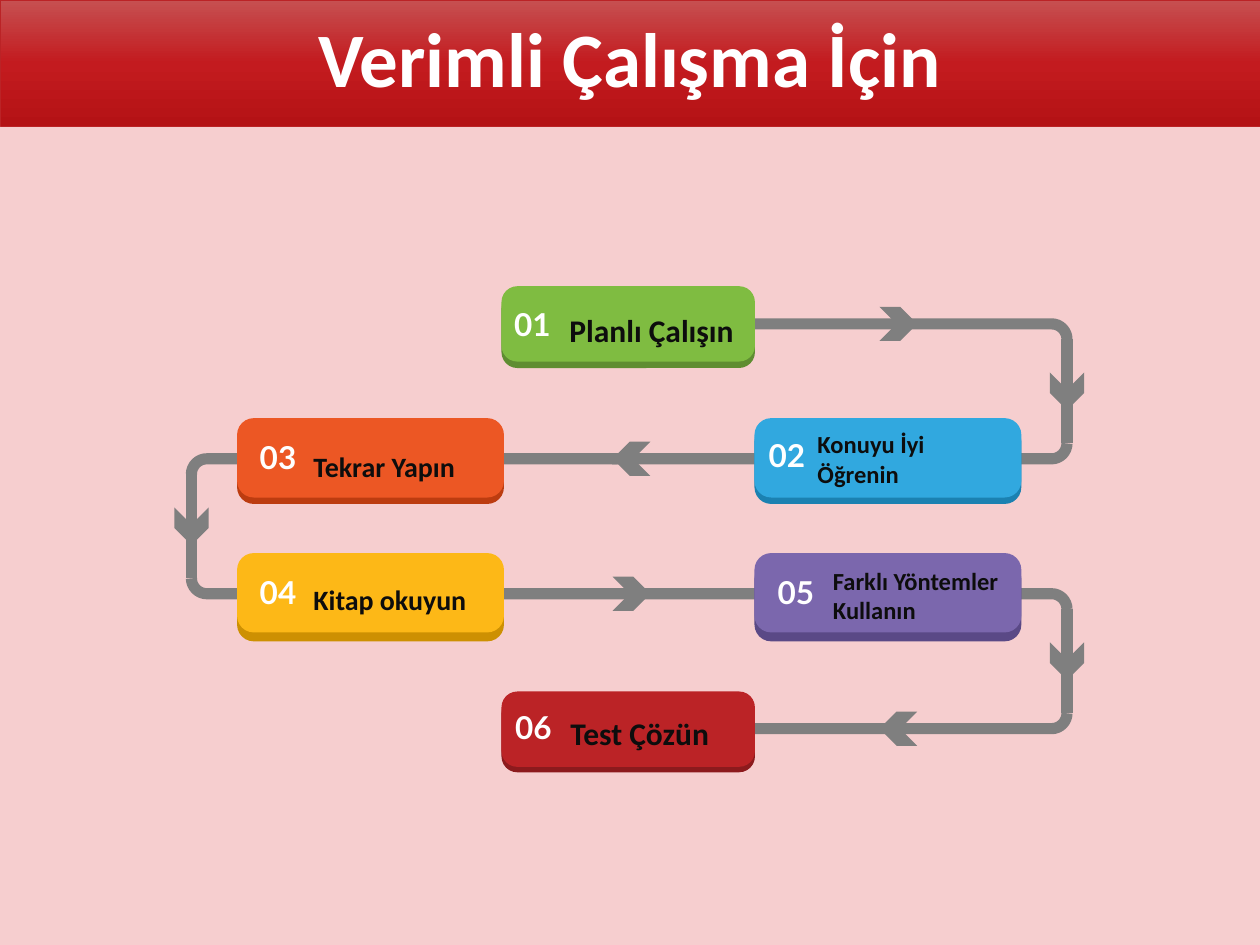
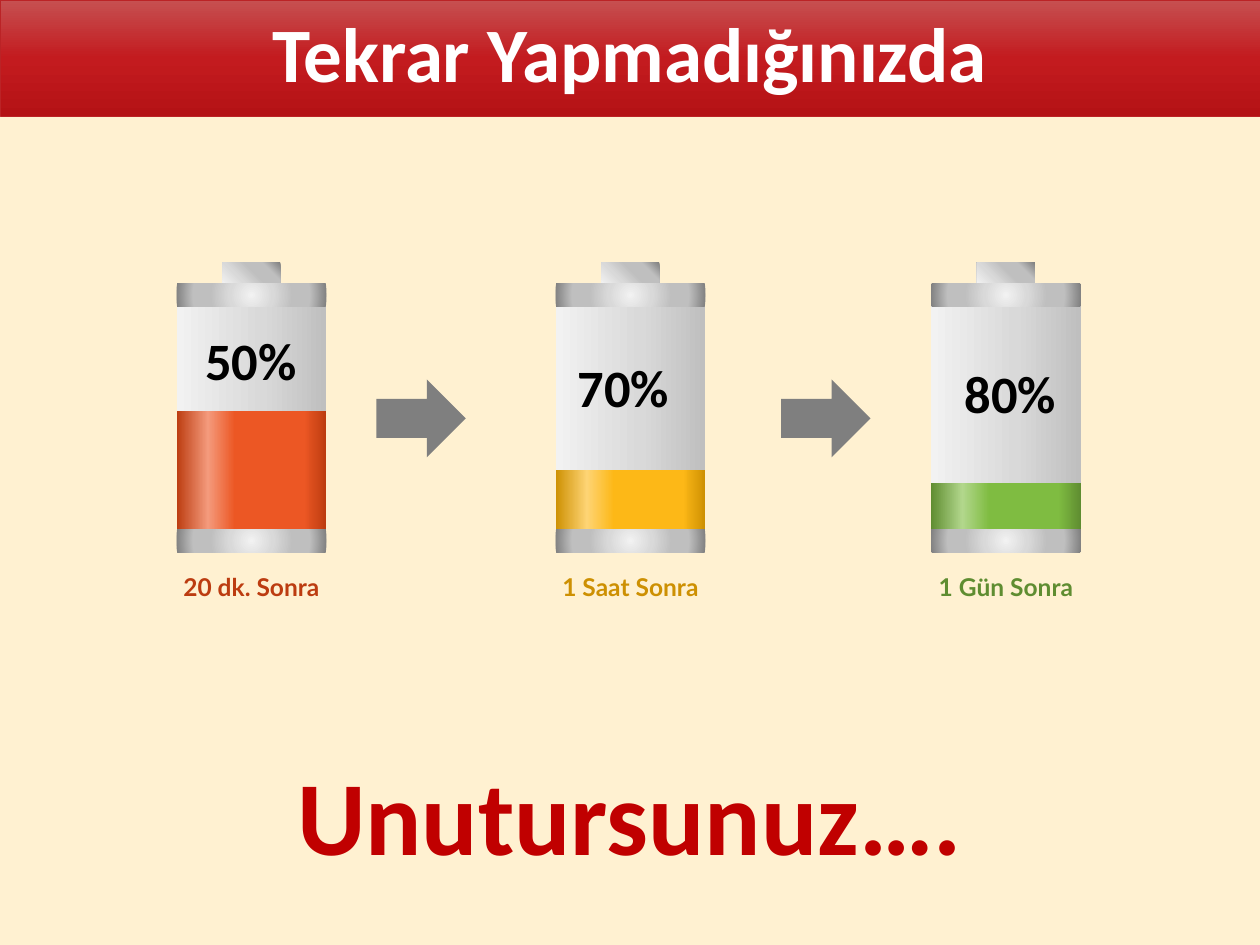
import math
from dataclasses import dataclass
from typing import NamedTuple

from lxml import etree
from pptx import Presentation
from pptx import util as u
from pptx.dml.color import RGBColor
from pptx.enum import shapes, text
from pptx.oxml import ns

Stops = tuple[tuple[int, str], ...]
Focus = tuple[int, int, int, int]


@dataclass(frozen=True)
class Theme:
    heading_font: str = "Calibri"
    number_font: str = "Lato"
    title_size: int = 44
    number_size: int = 18
    percent_size: int = 30
    caption_size: int = 14
    closing_size: int = 60
    white: str = "FFFFFF"
    black: str = "000000"
    ink: str = "0D0D0D"
    gray: str = "7F7F7F"
    pink: str = "F6CECF"
    cream: str = "FFF1D1"
    red: str = "BB2326"
    closing_red: str = "C00000"
    orange: str = "EC5724"
    dark_orange: str = "BC3C10"
    yellow: str = "FDB817"
    dark_yellow: str = "CD9002"
    green: str = "7FBC41"
    dark_green: str = "5F8D31"
    band: Stops = ((0, "C65051"), (50, "C31B1F"), (100, "B41215"))
    casing: Stops = ((0, "F2F2F2"), (57, "D9D9D9"), (100, "BFBFBF"))
    metal: Stops = ((0, "F2F2F2"), (29, "D9D9D9"), (55, "BFBFBF"),
                    (77, "BFBFBF"), (100, "808080"))


THEME = Theme()
PAGE_WIDTH, PAGE_HEIGHT = 25.4, 19.05

RAIL_TOP, RAIL_PITCH = 6.53, 2.72
RAIL_WEIGHT, BEND_RADIUS, BEND_STEPS = 6.38, 0.31, 8
CHEVRON_WIDTH, CHEVRON_HEIGHT = 0.76, 0.69
RAIL_CHEVRONS = ((18.11, 0), (12.73, 180), (12.73, 0), (18.11, 180))

BATTERY_TOP, BATTERY_WIDTH, BATTERY_HEIGHT = 5.72, 3.02, 5.41
CAP_HEIGHT, TERMINAL_WIDTH, TERMINAL_HEIGHT = 0.46, 1.17, 0.43
CAPTION_TOP, CAPTION_WIDTH = 11.4, 3.4


class Box(NamedTuple):
    left: float
    top: float
    width: float
    height: float

    def lengths(self) -> tuple[u.Length, ...]:
        return tuple(u.Cm(value) for value in self)


class Loop(NamedTuple):
    side: float
    upper_end: float
    lower_end: float


class Card(NamedTuple):
    number: str
    label: str
    face: Box
    depth: float
    fill: str
    edge: str
    number_at: tuple[float, float]
    label_box: Box
    label_size: int


class Battery(NamedTuple):
    left: float
    level: float
    percent: str
    percent_at: tuple[float, float]
    caption: str
    fill: str
    edge: str
    shine: str


LOOPS = (
    Loop(21.51, 13.23, 12.34),
    Loop(3.86, 12.45, 20.19),
    Loop(21.51, 16.79, 12.45),
)

CARDS = (
    Card("01", "Planlı Çalışın", Box(10.11, 5.77, 5.11, 1.52), 0.13,
         THEME.green, THEME.dark_green,
         (10.06, 6.02), Box(11.23, 6.15, 3.84, 1.02), 18),
    Card("02", "Konuyu İyi Öğrenin", Box(15.21, 8.43, 5.38, 1.6), 0.13,
         "31A8DF", "1B81B1",
         (15.19, 8.66), Box(16.23, 8.53, 4.34, 1.45), 14),
    Card("03", "Tekrar Yapın", Box(4.78, 8.43, 5.38, 1.6), 0.13,
         THEME.orange, THEME.dark_orange,
         (4.93, 8.71), Box(6.07, 8.94, 3.84, 0.94), 16),
    Card("05", "Farklı Yöntemler Kullanın", Box(15.21, 11.15, 5.38, 1.6), 0.18,
         "7B67AD", "5A4986",
         (15.37, 11.43), Box(16.54, 11.28, 3.84, 1.45), 14),
    Card("04", "Kitap okuyun", Box(4.78, 11.15, 5.38, 1.6), 0.18,
         THEME.yellow, THEME.dark_yellow,
         (4.93, 11.43), Box(6.07, 11.61, 3.84, 0.94), 16),
    Card("06", "Test Çözün", Box(10.11, 13.94, 5.11, 1.52), 0.11,
         THEME.red, "8C1A1D",
         (10.08, 14.15), Box(11.25, 14.27, 3.84, 1.02), 18),
)

BATTERIES = (
    Battery(3.56, 2.39, "50%", (3.89, 6.48), "20 dk. Sonra",
            THEME.orange, THEME.dark_orange, "F49A7C"),
    Battery(11.2, 1.19, "70%", (11.4, 7.04), "1 Saat Sonra",
            THEME.yellow, THEME.dark_yellow, "FED474"),
    Battery(18.77, 0.94, "80%", (19.2, 7.16), "1 Gün Sonra",
            THEME.green, THEME.dark_green, "B2D78C"),
)


def rgb(value: str) -> RGBColor:
    return RGBColor.from_string(value)


def paint_gradient(shape, stops: Stops, angle: int = 0,
                   focus: Focus | None = None) -> None:
    shape.fill.gradient()
    gradient = shape.element.spPr.find(ns.qn("a:gradFill"))
    for child in list(gradient):
        gradient.remove(child)
    stop_list = etree.SubElement(gradient, ns.qn("a:gsLst"))
    for position, color in stops:
        stop = etree.SubElement(stop_list, ns.qn("a:gs"), pos=str(position * 1000))
        etree.SubElement(stop, ns.qn("a:srgbClr"), val=color)
    if focus is None:
        etree.SubElement(gradient, ns.qn("a:lin"), ang=str(angle * 60000), scaled="0")
    else:
        circle = etree.SubElement(gradient, ns.qn("a:path"), path="circle")
        edges = {side: str(value * 1000) for side, value in zip("ltrb", focus)}
        etree.SubElement(circle, ns.qn("a:fillToRect"), **edges)


def add_plain(canvas, kind, box: Box, fill: str | None = None):
    shape = canvas.add_shape(kind, *box.lengths())
    shape.shadow.inherit = False
    shape.line.fill.background()
    if fill:
        shape.fill.solid()
        shape.fill.fore_color.rgb = rgb(fill)
    return shape


def format_runs(para, font: str, size: int, color: str) -> None:
    for span in para.runs:
        span.font.name = font
        span.font.size = u.Pt(size)
        span.font.bold = True
        span.font.color.rgb = rgb(color)


def add_words(canvas, words: str, box: Box, font: str, size: int, color: str,
              centered: bool = False, wrap: bool = True) -> None:
    frame = canvas.add_textbox(*box.lengths()).text_frame
    frame.text = words
    frame.word_wrap = wrap
    frame.auto_size = text.MSO_AUTO_SIZE.SHAPE_TO_FIT_TEXT
    para = frame.paragraphs[0]
    para.alignment = text.PP_ALIGN.CENTER if centered else text.PP_ALIGN.LEFT
    format_runs(para, font, size, color)


def add_page(deck, title: str, band_height: float, background: str):
    page = deck.slides.add_slide(deck.slide_layouts.get_by_name("Title Only"))
    page.background.fill.solid()
    page.background.fill.fore_color.rgb = rgb(background)
    band = page.shapes.title
    band.left, band.top, band.width, band.height = Box(
        0, 0, PAGE_WIDTH, band_height).lengths()
    paint_gradient(band, THEME.band, angle=90)
    band.line.color.rgb = rgb(THEME.red)
    band.line.width = u.Pt(0.5)
    frame = band.text_frame
    frame.text = title
    frame.auto_size = text.MSO_AUTO_SIZE.NONE
    frame.vertical_anchor = text.MSO_ANCHOR.MIDDLE
    para = frame.paragraphs[0]
    para.alignment = text.PP_ALIGN.CENTER
    para.line_spacing = 0.9
    format_runs(para, THEME.heading_font, THEME.title_size, THEME.white)
    return page


def style_rail(rail) -> None:
    rail.line.color.rgb = rgb(THEME.gray)
    rail.line.width = u.Pt(RAIL_WEIGHT)


def add_bend(page, inner_end: float, side: float, rail: float, down: int) -> None:
    outward = math.copysign(1, side - inner_end)
    center_x = side - outward * BEND_RADIUS
    center_y = rail + down * BEND_RADIUS
    turns = [step * math.pi / 2 / BEND_STEPS for step in range(BEND_STEPS + 1)]
    points = [(u.Cm(center_x + outward * BEND_RADIUS * math.sin(turn)),
               u.Cm(center_y - down * BEND_RADIUS * math.cos(turn)))
              for turn in turns]
    builder = page.shapes.build_freeform(u.Cm(inner_end), u.Cm(rail))
    builder.add_line_segments(points, close=False)
    bend = builder.convert_to_shape()
    bend.shadow.inherit = False
    bend.fill.background()
    style_rail(bend)


def add_loop(page, loop: Loop, upper: float) -> None:
    lower = upper + RAIL_PITCH
    add_bend(page, loop.upper_end, loop.side, upper, 1)
    add_bend(page, loop.lower_end, loop.side, lower, -1)
    upright = page.shapes.add_connector(
        shapes.MSO_CONNECTOR.STRAIGHT,
        u.Cm(loop.side), u.Cm(upper + BEND_RADIUS),
        u.Cm(loop.side), u.Cm(lower - BEND_RADIUS))
    style_rail(upright)
    etree.SubElement(upright.element.spPr, ns.qn("a:effectLst"))


def add_chevron(page, center_x: float, center_y: float, angle: int) -> None:
    box = Box(center_x - CHEVRON_WIDTH / 2, center_y - CHEVRON_HEIGHT / 2,
              CHEVRON_WIDTH, CHEVRON_HEIGHT)
    add_plain(page.shapes, shapes.MSO_SHAPE.CHEVRON, box, THEME.gray).rotation = angle


def add_card(page, card: Card) -> None:
    canvas = page.shapes.add_group_shape().shapes
    for drop, color in ((card.depth, card.edge), (0, card.fill)):
        box = card.face._replace(top=card.face.top + drop)
        plate = add_plain(canvas, shapes.MSO_SHAPE.ROUNDED_RECTANGLE, box, color)
        plate.adjustments[0] = 0.21
    add_words(canvas, card.number, Box(*card.number_at, 1.35, 1.02),
              THEME.number_font, THEME.number_size, THEME.white, centered=True)
    add_words(canvas, card.label, card.label_box,
              THEME.heading_font, card.label_size, THEME.ink)


def add_battery(page, battery: Battery) -> None:
    canvas = page.shapes.add_group_shape().shapes
    center = battery.left + BATTERY_WIDTH / 2
    level_bottom = BATTERY_TOP + BATTERY_HEIGHT - CAP_HEIGHT
    liquid = ((0, battery.edge), (21, battery.shine), (39, battery.fill),
              (85, battery.fill), (100, battery.edge))
    middle = (50, 50, 50, 50)
    parts = (
        (BATTERY_TOP, BATTERY_WIDTH, BATTERY_HEIGHT, THEME.casing, None),
        (BATTERY_TOP - TERMINAL_HEIGHT, TERMINAL_WIDTH, TERMINAL_HEIGHT,
         THEME.metal, (0, 100, 100, 0)),
        (BATTERY_TOP, BATTERY_WIDTH, CAP_HEIGHT, THEME.metal, middle),
        (level_bottom, BATTERY_WIDTH, CAP_HEIGHT, THEME.metal, middle),
        (level_bottom - battery.level, BATTERY_WIDTH, battery.level, liquid, None),
    )
    for top, width, height, stops, focus in parts:
        box = Box(center - width / 2, top, width, height)
        part = add_plain(canvas, shapes.MSO_SHAPE.RECTANGLE, box)
        paint_gradient(part, stops, focus=focus)
    add_words(page.shapes, battery.percent, Box(*battery.percent_at, 2.39, 1.55),
              THEME.heading_font, THEME.percent_size, THEME.black, wrap=False)
    caption_box = Box(center - CAPTION_WIDTH / 2, CAPTION_TOP, CAPTION_WIDTH, 0.86)
    add_words(page.shapes, battery.caption, caption_box, THEME.number_font,
              THEME.caption_size, battery.edge, centered=True, wrap=False)


def build_study_steps(deck) -> None:
    page = add_page(deck, "Verimli Çalışma İçin", 2.54, THEME.pink)
    for row, loop in enumerate(LOOPS):
        add_loop(page, loop, RAIL_TOP + row * RAIL_PITCH)
    for card in CARDS:
        add_card(page, card)
    for row, (center_x, angle) in enumerate(RAIL_CHEVRONS):
        add_chevron(page, center_x, RAIL_TOP + row * RAIL_PITCH, angle)
    for row, loop in enumerate(LOOPS):
        add_chevron(page, loop.side, RAIL_TOP + (row + 0.5) * RAIL_PITCH, 90)


def build_forgetting(deck) -> None:
    page = add_page(deck, "Tekrar Yapmadığınızda", 2.34, THEME.cream)
    for battery in BATTERIES:
        add_battery(page, battery)
    for left in (7.59, 15.75):
        add_plain(page.shapes, shapes.MSO_SHAPE.RIGHT_ARROW,
                  Box(left, 7.65, 1.8, 1.57), THEME.gray)
    add_words(page.shapes, "Unutursunuz….", Box(5.74, 15.01, 17.5, 2.82),
              THEME.heading_font, THEME.closing_size, THEME.closing_red)


def main() -> None:
    deck = Presentation()
    deck.slide_width, deck.slide_height = u.Cm(PAGE_WIDTH), u.Cm(PAGE_HEIGHT)
    build_study_steps(deck)
    build_forgetting(deck)
    deck.save("out.pptx")


if __name__ == "__main__":
    main()
